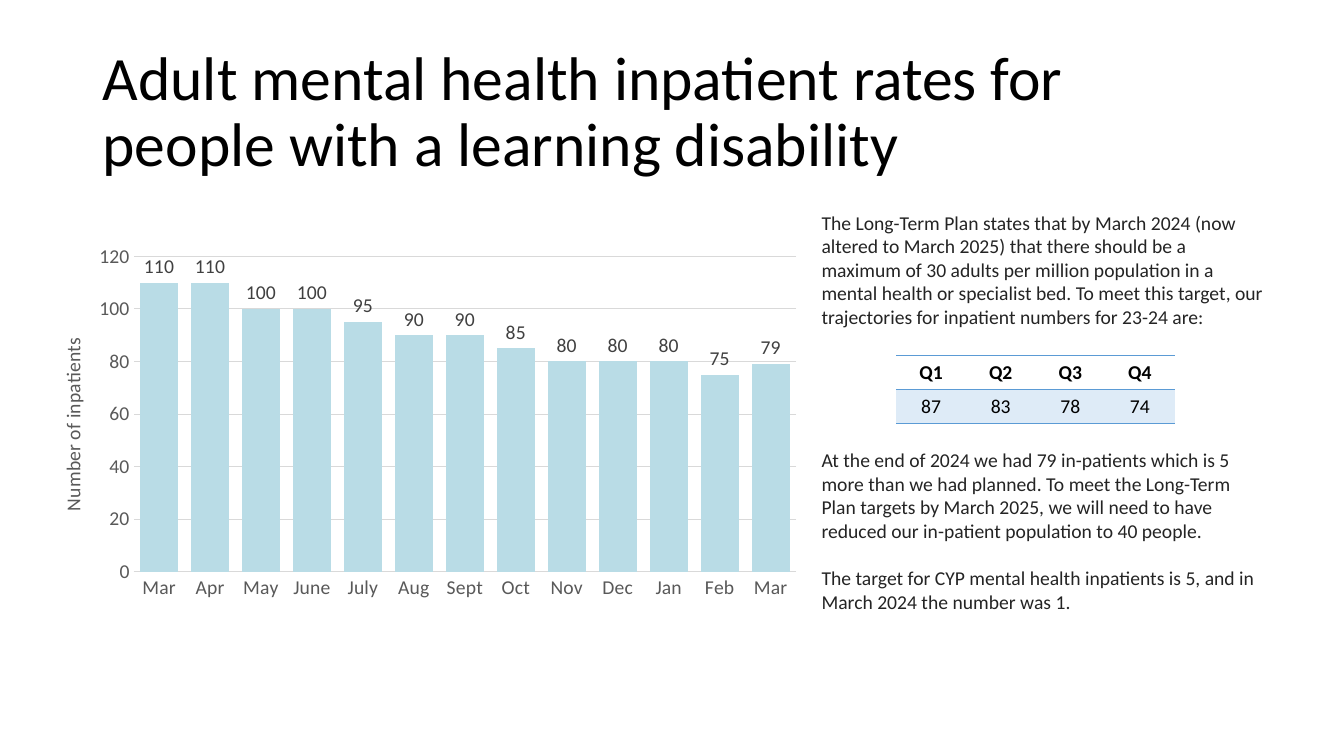
from lxml import etree
from pptx import Presentation, util as u
from pptx.chart.data import CategoryChartData
from pptx.dml.color import RGBColor
from pptx.enum import chart as charts, text
from pptx.oxml import parse_xml
from pptx.oxml.ns import nsdecls, qn

WIDTH, HEIGHT = u.Inches(13.33), u.Inches(7.5)
FONT = "Calibri"
BLACK, BODY, AXIS, LABEL = "000000", "242424", "595959", "404040"
BAR, GRID, ACCENT, BAND = "B9DCE6", "D9D9D9", "5B9BD5", "DEEBF7"
NUMBER_FORMAT = r"[$-10409]#,##0;\(#,##0\)"

TITLE = "Adult mental health inpatient rates for people with a learning disability"
MONTHS = "Mar Apr May June July Aug Sept Oct Nov Dec Jan Feb Mar".split()
INPATIENTS = [110, 110, 100, 100, 95, 90, 90, 85, 80, 80, 80, 75, 79]
TRAJECTORY = [["Q1", "Q2", "Q3", "Q4"], ["87", "83", "78", "74"]]
PARAGRAPHS = [
    ("The Long-Term Plan states that by March 2024 (now altered to March 2025) "
     "that there should be a maximum of 30 adults per million population in a "
     "mental health or specialist bed. To meet this target, our trajectories "
     "for inpatient numbers for 23-24 are:", 85.5),
    ("At the end of 2024 we had 79 in-patients which is 5 more than we had "
     "planned. To meet the Long-Term Plan targets by March 2025, we will need to "
     "have reduced our in-patient population to 40 people.", 17),
    ("The target for CYP mental health inpatients is 5, and in March 2024 the "
     "number was 1.", 0),
]


def place(left, top, width, height):
    """Turn cells of a 100 by 100 grid into slide lengths."""
    column, row = WIDTH / 100, HEIGHT / 100
    return int(left * column), int(top * row), int(width * column), int(height * row)


def color(value):
    """Return the colour of a hex string."""
    return RGBColor.from_string(value)


def style(font, size, value, bold=False):
    """Set face, size, colour and weight of a font."""
    font.name, font.size, font.bold = FONT, u.Pt(size), bold
    font.color.rgb = color(value)


def add_text(slide, box, paragraphs, size, value, spacing=1.0,
             anchor=text.MSO_ANCHOR.TOP):
    """Add a wrapped text box of (wording, space after) paragraphs."""
    frame = slide.shapes.add_textbox(*place(*box)).text_frame
    frame.word_wrap = True
    frame.vertical_anchor = anchor
    frame.text = "\n".join(wording for wording, _ in paragraphs)
    for paragraph, (_, gap) in zip(frame.paragraphs, paragraphs):
        paragraph.line_spacing = spacing
        paragraph.space_after = u.Pt(gap)
        style(paragraph.runs[0].font, size, value)


def set_layout(element, index, **shares):
    """Fix a chart element at shares of the chart's size."""
    for layout in element.findall(qn("c:layout")):
        element.remove(layout)
    layout = parse_xml(f'<c:layout {nsdecls("c")}><c:manualLayout/></c:layout>')
    if "w" in shares:
        etree.SubElement(layout[0], qn("c:layoutTarget")).set("val", "inner")
    for name in ("xMode", "yMode"):
        etree.SubElement(layout[0], qn(f"c:{name}")).set("val", "edge")
    for name, share in shares.items():
        etree.SubElement(layout[0], qn(f"c:{name}")).set("val", str(share))
    element.insert(index, layout)


def style_line(line, value):
    """Give an axis or grid line its colour and hairline width."""
    line.color.rgb = color(value)
    line.width = u.Pt(0.75)


def style_axes(chart):
    """Format both axes, the gridlines and the axis title."""
    category, value = chart.category_axis, chart.value_axis
    for axis in (category, value):
        axis.major_tick_mark = axis.minor_tick_mark = charts.XL_TICK_MARK.NONE
        style(axis.tick_labels.font, 14, AXIS)
    style_line(category.format.line, GRID)
    style_line(value.major_gridlines.format.line, GRID)
    value.format.line.fill.background()
    value.minimum_scale, value.maximum_scale, value.major_unit = 0, 120, 20
    value.tick_labels.number_format = NUMBER_FORMAT
    value.tick_labels.number_format_is_linked = False
    frame = value.axis_title.text_frame
    frame.text = "Number of inpatients"
    style(frame.paragraphs[0].runs[0].font, 14, AXIS)


def add_column_chart(slide, box):
    """Add the monthly inpatient column chart."""
    data = CategoryChartData()
    data.categories = MONTHS
    data.add_series("Series 1", INPATIENTS)
    chart = slide.shapes.add_chart(
        charts.XL_CHART_TYPE.COLUMN_CLUSTERED, *place(*box), data).chart
    chart.has_legend = chart.has_title = False
    style(chart.font, 14, BLACK)
    style_axes(chart)
    plot = chart.plots[0]
    plot.gap_width, plot.overlap, plot.vary_by_categories = 34, -27, False
    fill = plot.series[0].format.fill
    fill.solid()
    fill.fore_color.rgb = color(BAR)
    labels = plot.series[0].data_labels
    labels.show_value = True
    labels.position = charts.XL_LABEL_POSITION.OUTSIDE_END
    labels.number_format, labels.number_format_is_linked = NUMBER_FORMAT, False
    style(labels.font, 14, LABEL)
    root = chart._chartSpace
    set_layout(root.find(f".//{qn('c:plotArea')}"), 0, x=0.13, y=0.05, w=0.85, h=0.85)
    set_layout(root.find(f".//{qn('c:valAx')}/{qn('c:title')}"), 1, x=0.03, y=0.26)


def set_borders(cell):
    """Rule a cell above and below only."""
    paint = {
        "L": "<a:noFill/>",
        "T": f'<a:solidFill><a:srgbClr val="{ACCENT}"/></a:solidFill>',
    }
    paint["R"], paint["B"] = paint["L"], paint["T"]
    properties = cell._tc.get_or_add_tcPr()
    for index, side in enumerate("LRTB"):
        properties.insert(index, parse_xml(
            f'<a:ln{side} {nsdecls("a")} w="{u.Pt(1)}">{paint[side]}</a:ln{side}>'))


def add_table(slide, box, rows):
    """Add a ruled table with a bold header and tinted values."""
    table = slide.shapes.add_table(len(rows), len(rows[0]), *place(*box)).table
    for row_index, row in enumerate(rows):
        for column_index, wording in enumerate(row):
            cell = table.cell(row_index, column_index)
            cell.text = wording
            paragraph = cell.text_frame.paragraphs[0]
            paragraph.alignment = text.PP_ALIGN.CENTER
            style(paragraph.runs[0].font, 14, BLACK, bold=row_index == 0)
            if row_index:
                cell.fill.solid()
                cell.fill.fore_color.rgb = color(BAND)
            else:
                cell.fill.background()
            set_borders(cell)


def main():
    """Build and save the slide."""
    presentation = Presentation()
    presentation.slide_width, presentation.slide_height = WIDTH, HEIGHT
    slide = presentation.slides.add_slide(presentation.slide_layouts[6])
    add_text(slide, (6.9, 5.33, 86.27, 19.33), [(TITLE, 0)], 44, BLACK,
             spacing=0.9, anchor=text.MSO_ANCHOR.MIDDLE)
    add_text(slide, (60.39, 27.2, 34.81, 54.8), PARAGRAPHS, 14, BODY)
    add_column_chart(slide, (2.4, 31.47, 58, 49.07))
    add_table(slide, (66.7, 47.07, 20.7, 8.93), TRAJECTORY)
    presentation.save("out.pptx")


if __name__ == "__main__":
    main()
